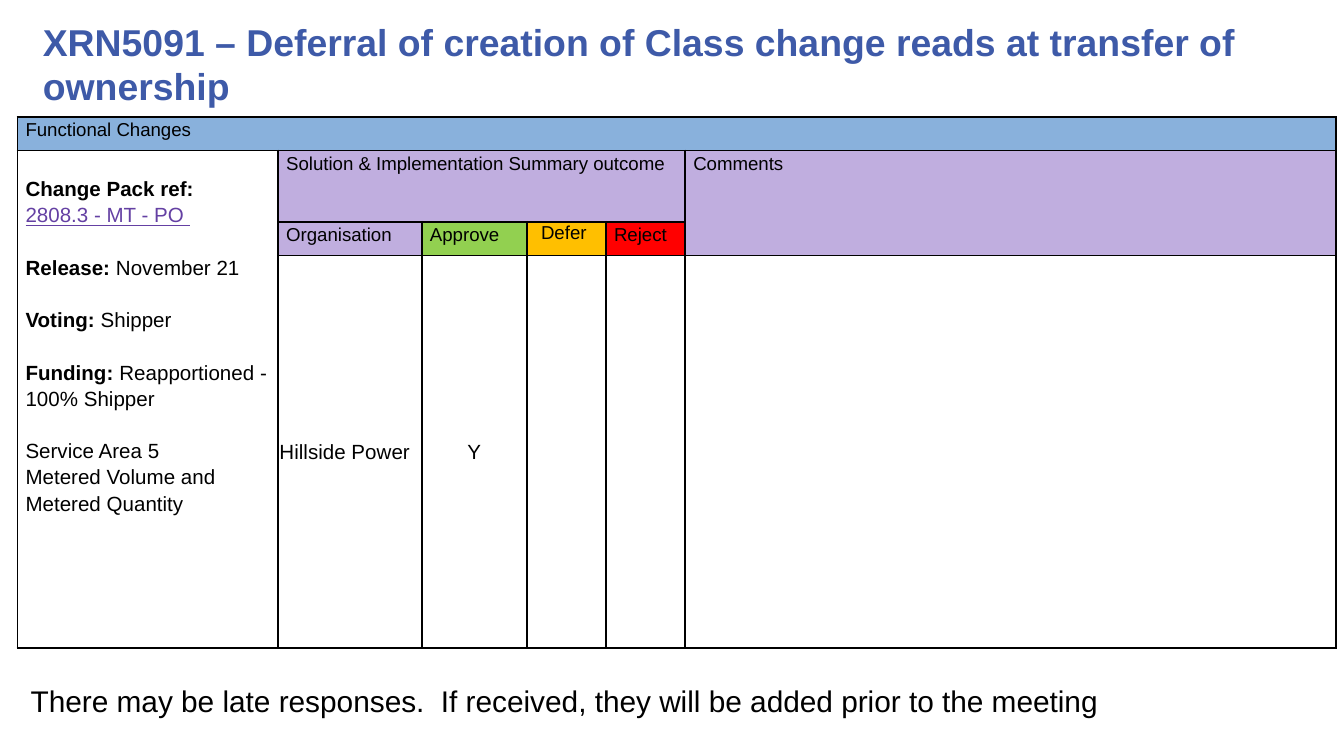
from lxml.etree import SubElement
from pptx import Presentation
from pptx.dml.color import RGBColor
from pptx.enum.text import MSO_ANCHOR, PP_ALIGN
from pptx.oxml.ns import qn
from pptx.util import Inches, Pt

COLORS = {
    "title": "3E5AA8", "black": "000000", "link": "6440A3", "blue": "89B1DC",
    "purple": "C0AEDF", "green": "92D050", "amber": "FFBF00", "red": "FF0000",
}
COLUMNS = [1.94, 1.07, 0.78, 0.59, 0.59, 4.84]
ROWS = [0.25, 0.53, 0.25, 2.92]
MERGES = [(0, 0, 0, 5), (1, 0, 3, 0), (1, 1, 1, 4), (1, 5, 2, 5)]
HEADERS = [
    (0, 0, "Functional Changes", "blue"),
    (1, 1, "Solution & Implementation Summary outcome", "purple"),
    (1, 5, "Comments", "purple"),
    (2, 1, "Organisation", "purple"),
    (2, 2, "Approve", "green"),
    (2, 4, "Reject", "red"),
]
DETAILS = [
    (0, "Change Pack ref:\u00a0", ""),
    (0, "", "2808.3 - MT - PO "),
    (14, "Release: ", "November 21"),
    (14, "Voting: ", "Shipper"),
    (14, "Funding: ", "Reapportioned - 100% Shipper"),
    (14, "", "Service Area 5"),
    (0, "", "Metered Volume and Metered Quantity"),
]


class SlideBuilder:
    """Holds the slide and its text and table style."""

    def __init__(self, slide, font="Arial"):
        self.slide = slide
        self.font = font

    def style(self, paragraph, size, color="black", bold=None):
        paragraph.font.name = self.font
        paragraph.font.size = Pt(size)
        paragraph.font.bold = bold
        paragraph.font.color.rgb = RGBColor.from_string(COLORS[color])

    def text(self, left, top, width, height, words, size, color="black", bold=False):
        shape = self.slide.shapes.add_textbox(
            Inches(left), Inches(top), Inches(width), Inches(height))
        shape.text_frame.word_wrap = True
        paragraph = shape.text_frame.paragraphs[0]
        paragraph.text = words
        self.style(paragraph, size, color, bold)

    def borders(self, cell):
        properties = cell._tc.get_or_add_tcPr()
        for side in ("lnL", "lnR", "lnT", "lnB"):
            line = SubElement(properties, qn(f"a:{side}"), w=str(Pt(1)))
            fill = SubElement(line, qn("a:solidFill"))
            SubElement(fill, qn("a:srgbClr"), val=COLORS["black"])

    def table(self, left, top, columns, rows, merges):
        table = self.slide.shapes.add_table(
            len(rows), len(columns), Inches(left), Inches(top),
            Inches(sum(columns)), Inches(sum(rows))).table
        table.first_row = table.horz_banding = False
        for column, width in zip(table.columns, columns):
            column.width = Inches(width)
        for row, height in zip(table.rows, rows):
            row.height = Inches(height)
        for cell in table.iter_cells():
            self.borders(cell)
            cell.fill.background()
            self.margins(cell, 0.06, 0)
            self.style(cell.text_frame.paragraphs[0], 10)
        for first_row, first_column, last_row, last_column in merges:
            table.cell(first_row, first_column).merge(table.cell(last_row, last_column))
        return table

    def margins(self, cell, side, top):
        cell.margin_left = cell.margin_right = Inches(side)
        cell.margin_top = Inches(top)
        cell.margin_bottom = 0

    def cell(self, cell, words, size=10, fill=None, spacing=None, align=None):
        paragraph = cell.text_frame.paragraphs[0]
        paragraph.text = words
        paragraph.line_spacing = spacing
        paragraph.alignment = align
        self.style(paragraph, size)
        if fill:
            cell.fill.solid()
            cell.fill.fore_color.rgb = RGBColor.from_string(COLORS[fill])

    def details(self, cell, lines, size=11):
        frame = cell.text_frame
        self.margins(cell, 0.06, 0.18)
        for index, (space, label, value) in enumerate(lines):
            paragraph = frame.add_paragraph() if index else frame.paragraphs[0]
            paragraph.line_spacing = 1.15
            paragraph.space_before = Pt(space)
            self.style(paragraph, size)
            for words, bold in ((label, True), (value, False)):
                if words:
                    run = paragraph.add_run()
                    run.text = words
                    run.font.bold = bold
        link = frame.paragraphs[1].runs[0]
        link.font.underline = True
        link.font.color.rgb = RGBColor.from_string(COLORS["link"])


def main():
    presentation = Presentation()
    presentation.slide_width = Inches(10)
    presentation.slide_height = Inches(10) * 9 // 16
    builder = SlideBuilder(presentation.slides.add_slide(presentation.slide_layouts[6]))
    builder.text(0.22, 0.09, 9.71, 0.77,
                 "XRN5091 – Deferral of creation of Class change reads at transfer of ownership",
                 20, "title", True)
    table = builder.table(0.13, 0.87, COLUMNS, ROWS, MERGES)
    for row, column, words, fill in HEADERS:
        builder.cell(table.cell(row, column), words, fill=fill, spacing=1.15)
    builder.details(table.cell(1, 0), DETAILS)
    defer, organisation, vote = table.cell(2, 3), table.cell(3, 1), table.cell(3, 2)
    builder.cell(defer, "Defer ", fill="amber", align=PP_ALIGN.CENTER)
    builder.cell(organisation, "Hillside Power", 11)
    builder.cell(vote, "Y", 11, align=PP_ALIGN.CENTER)
    for cell in (defer, organisation, vote):
        builder.margins(cell, 0.01, 0.01)
    for cell in (organisation, vote):
        cell.vertical_anchor = MSO_ANCHOR.MIDDLE
    builder.text(0.13, 5.03, 9.71, 0.37,
                 "There may be late responses.  If received, they will be added prior to the meeting",
                 16)
    presentation.save("out.pptx")


if __name__ == "__main__":
    main()
